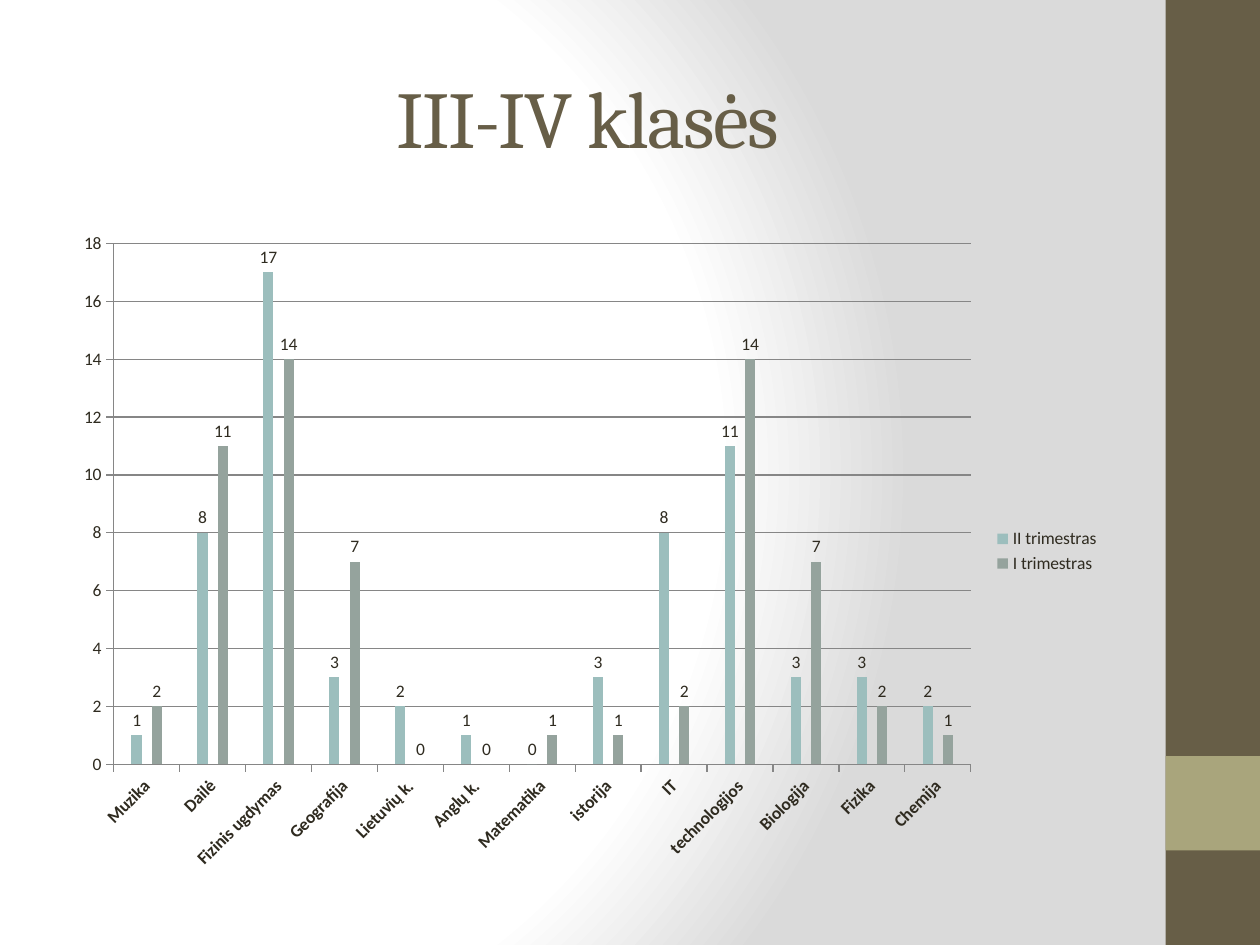
from lxml.etree import SubElement
from pptx import Presentation
from pptx.chart.data import CategoryChartData
from pptx.dml.color import RGBColor
from pptx.enum.chart import (XL_CHART_TYPE, XL_LABEL_POSITION,
                             XL_LEGEND_POSITION, XL_TICK_MARK)
from pptx.enum.shapes import MSO_SHAPE
from pptx.enum.text import MSO_ANCHOR, PP_ALIGN
from pptx.oxml import parse_xml
from pptx.oxml.ns import nsdecls, qn
from pptx.util import Inches, Pt

WIDTH, HEIGHT = 10, 7.5
COLORS = {
    "brown": "675E47", "olive": "A9A57C", "teal": "9CBEBD", "lime": "D2CB6C",
    "sage": "95A39D", "ochre": "C89F5D", "text": "2F2B20", "line": "868686",
    "white": "FFFFFF", "grey": "DADADA",
}
SUBJECTS = ["Muzika", "Dailė", "Fizinis ugdymas", "Geografija", "Lietuvių k.",
            "Anglų k.", "Matematika", "istorija", "IT", "technologijos",
            "Biologija", "Fizika", "Chemija"]
EMPTY = [None] * len(SUBJECTS)
# Empty series space the two terms apart
SERIES = [
    ("Series 1", EMPTY, "olive"),
    ("II trimestras", [1, 8, 17, 3, 2, 1, 0, 3, 8, 11, 3, 3, 2], "teal"),
    ("Series 3", EMPTY, "lime"),
    ("I trimestras", [2, 11, 14, 7, 0, 0, 1, 1, 2, 14, 7, 2, 1], "sage"),
    ("Series 5", EMPTY, "ochre"),
]


def rgb(name):
    return RGBColor.from_string(COLORS[name])


def inches(box):
    return [Inches(length) for length in box]


def paint_background(slide):
    """Radial gradient, white at the left and grey at the right."""
    stops = "".join(
        f'<a:gs pos="{share * 1000}"><a:srgbClr val="{COLORS[name]}"/></a:gs>'
        for share, name in [(0, "white"), (75, "white"), (100, "grey")])
    background = parse_xml(
        f'<p:bg {nsdecls("p", "a")}><p:bgPr><a:gradFill rotWithShape="1">'
        f'<a:gsLst>{stops}</a:gsLst><a:path path="circle">'
        '<a:fillToRect l="20000" t="50000" r="100000" b="50000"/></a:path>'
        '</a:gradFill><a:effectLst/></p:bgPr></p:bg>')
    slide._element.cSld.insert(0, background)


def add_side_band(slide, box):
    """Brown band with an olive square at eight tenths of its height."""
    left, top, width, height = box
    parts = [(box, "brown"),
             ((left, top + 0.8 * height, width, width), "olive")]
    for part_box, color in parts:
        part = slide.shapes.add_shape(MSO_SHAPE.RECTANGLE, *inches(part_box))
        part.shadow.inherit = False
        part.fill.solid()
        part.fill.fore_color.rgb = rgb(color)
        part.line.fill.background()


def place_title(slide, box, words):
    title = slide.shapes.title
    title.left, title.top, title.width, title.height = inches(box)
    frame = title.text_frame
    frame.text = words
    frame.vertical_anchor = MSO_ANCHOR.MIDDLE
    heading = frame.paragraphs[0]
    heading.alignment = PP_ALIGN.CENTER
    run = heading.runs[0]
    run.font.size, run.font.name = Pt(46), "Cambria"
    run.font.color.rgb = rgb("brown")
    run.font._element.set("spc", "-100")


def style_axes(chart):
    subjects, counts = chart.category_axis, chart.value_axis
    for axis in (subjects, counts):
        axis.major_tick_mark = XL_TICK_MARK.OUTSIDE
        axis.minor_tick_mark = XL_TICK_MARK.NONE
        axis.format.line.color.rgb = rgb("line")
    subjects.tick_labels.font.bold = True
    subjects._element.find(qn("c:txPr")).find(qn("a:bodyPr")).set("rot", "-2700000")
    counts.minimum_scale, counts.maximum_scale, counts.major_unit = 0, 18, 2
    counts.has_major_gridlines = True
    counts.major_gridlines.format.line.color.rgb = rgb("line")


def style_legend(chart):
    chart.has_legend = True
    legend = chart.legend
    legend.position = XL_LEGEND_POSITION.RIGHT
    legend.include_in_layout = False
    anchor = legend._element.find(qn("c:legendPos"))
    hidden = [i for i, (_, counts, _) in enumerate(SERIES) if counts is EMPTY]
    for index in reversed(hidden):
        entry = SubElement(legend._element, qn("c:legendEntry"))
        SubElement(entry, qn("c:idx")).set("val", str(index))
        SubElement(entry, qn("c:delete")).set("val", "1")
        anchor.addnext(entry)


def add_subject_chart(slide, box):
    data = CategoryChartData()
    data.categories = SUBJECTS
    for name, counts, _ in SERIES:
        data.add_series(name, counts)
    chart = slide.shapes.add_chart(
        XL_CHART_TYPE.COLUMN_CLUSTERED, *inches(box), data).chart
    chart.has_title = False
    chart.font.size, chart.font.name = Pt(10), "Calibri"
    chart.font.color.rgb = rgb("text")
    columns = chart.plots[0]
    columns.gap_width, columns.overlap = 150, 0
    columns.vary_by_categories = False
    for term, (_, counts, color) in zip(columns.series, SERIES):
        term.format.fill.solid()
        term.format.fill.fore_color.rgb = rgb(color)
        if counts is not EMPTY:
            term.data_labels.show_value = True
            term.data_labels.position = XL_LABEL_POSITION.OUTSIDE_END
    style_axes(chart)
    style_legend(chart)


def main():
    deck = Presentation()
    deck.slide_width, deck.slide_height = Inches(WIDTH), Inches(HEIGHT)
    slide = deck.slides.add_slide(deck.slide_layouts.get_by_name("Title Only"))
    margin, content = 0.05 * WIDTH, 0.833 * WIDTH
    paint_background(slide)
    add_side_band(slide, (0.925 * WIDTH, 0, 0.075 * WIDTH, HEIGHT))
    place_title(slide, (margin, 0.04 * HEIGHT, content, HEIGHT / 6),
                "III-IV klasės")
    add_subject_chart(slide, (margin, 1.75, content, 0.7 * HEIGHT))
    deck.save("out.pptx")


if __name__ == "__main__":
    main()
